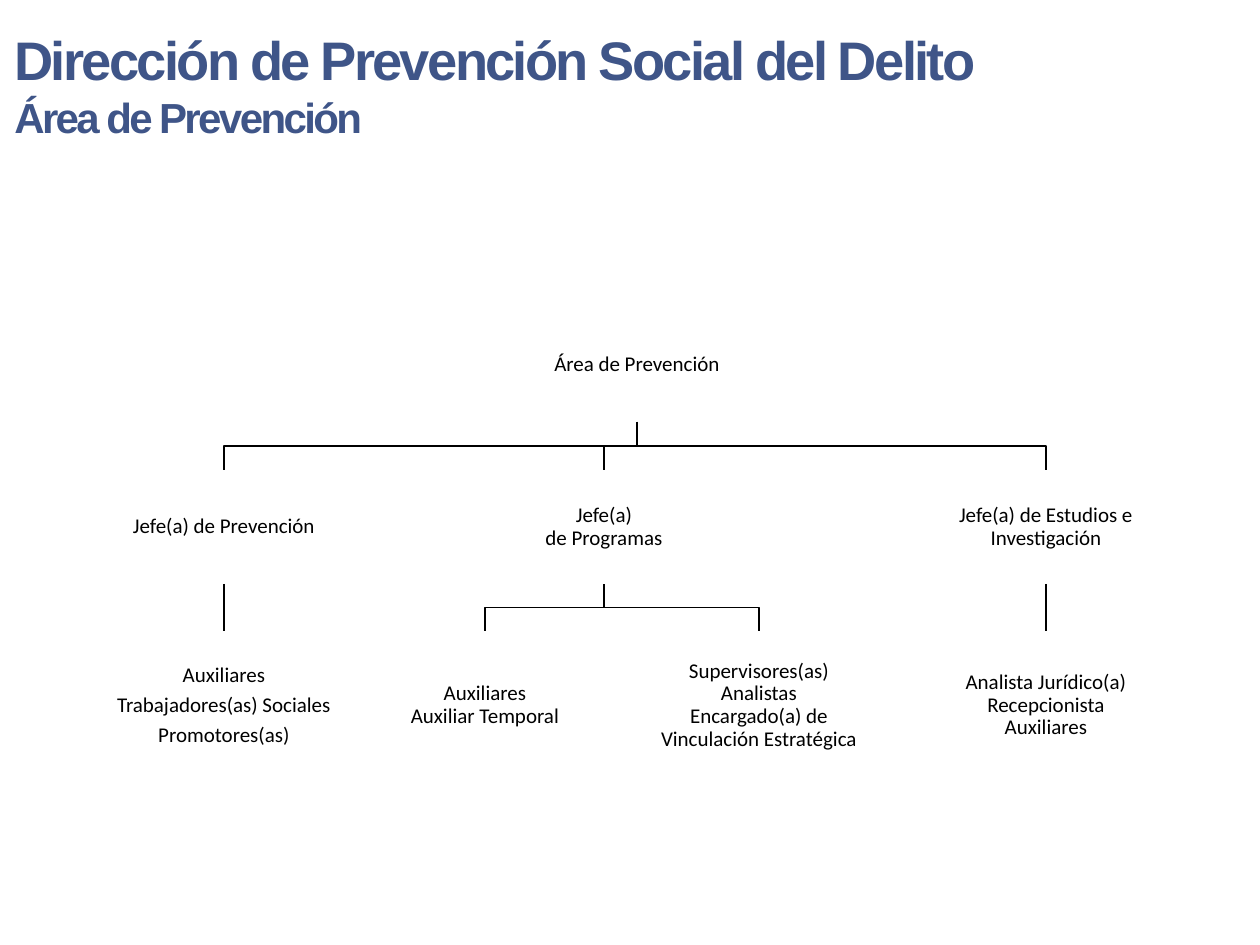
from pptx import Presentation
from pptx import util as u
from pptx.dml.color import RGBColor
from pptx.enum import shapes, text
from pptx.oxml import ns
from lxml import etree

THEME = {
    "title": {"name": "Arial", "size": u.Pt(31), "bold": True},
    "sub": {"name": "Arial", "size": u.Pt(24), "bold": True},
    "node": {"name": "Calibri", "size": u.Pt(12)},
    "head": RGBColor(0x3F, 0x55, 0x88),
    "ink": RGBColor(0, 0, 0),
    "paper": RGBColor(255, 255, 255),
    "line": u.Pt(1),
    "gap": u.Pt(4.2),
}

# Each chief: left edge, lines, loose spacing, staff as (left edge, lines)
CHIEFS = [
    (0, ["Jefe(a) de Prevención"], True,
     [(0, ["Auxiliares", "Trabajadores(as) Sociales", "Promotores(as)"])]),
    (380, ["Jefe(a)", "de Programas"], False,
     [(261, ["Auxiliares", "Auxiliar Temporal"]),
      (535, ["Supervisores(as)", "Analistas", "Encargado(a) de",
             "Vinculación Estratégica"])]),
    (822, ["Jefe(a) de Estudios e", "Investigación"], False,
     [(822, ["Analista Jurídico(a)", "Recepcionista", "Auxiliares"])]),
]


def px(n):
    return u.Emu(round(n * 914400 / 126))


def style(par, font, color):
    for key, val in font.items():
        setattr(par.font, key, val)
    par.font.color.rgb = color


def ink(line):
    line.color.rgb = THEME["ink"]
    line.width = THEME["line"]


def title(slide, x, y, w, h):
    box = slide.shapes.add_textbox(*map(px, (x, y, w, h)))
    frame = box.text_frame
    frame.word_wrap = True
    frame.auto_size = text.MSO_AUTO_SIZE.SHAPE_TO_FIT_TEXT
    frame.text = "Dirección de Prevención Social del Delito\nÁrea de Prevención"
    for par, key in zip(frame.paragraphs, ("title", "sub")):
        style(par, THEME[key], THEME["head"])
        # Tight letter spacing
        par.runs[0].font._element.set("spc", "-150")


def node(slide, x, y, w, h, lines, loose=False):
    box = slide.shapes.add_shape(shapes.MSO_SHAPE.RECTANGLE,
                                 *map(px, (x, y, w, h)))
    box.shadow.inherit = False
    box.fill.solid()
    box.fill.fore_color.rgb = THEME["paper"]
    box.line.fill.background()
    frame = box.text_frame
    frame.text = "\n".join(lines)
    frame.word_wrap = True
    frame.vertical_anchor = text.MSO_ANCHOR.MIDDLE
    for side in ("left", "top", "right", "bottom"):
        setattr(frame, f"margin_{side}", px(1))
    for par in frame.paragraphs:
        par.alignment = text.PP_ALIGN.CENTER
        par.line_spacing = 0.9
        if loose:
            par.space_after = THEME["gap"]
        style(par, THEME["node"], THEME["ink"])
    return box


def link(slide, top, low):
    x1, y1 = top.left + top.width // 2, top.top + top.height
    x2, y2 = low.left + low.width // 2, low.top
    if x1 == x2:
        wire = slide.shapes.add_connector(shapes.MSO_CONNECTOR.STRAIGHT,
                                          x1, y1, x2, y2)
        wire.begin_connect(top, 2)
        wire.end_connect(low, 0)
        etree.SubElement(wire._element.spPr, ns.qn("a:effectLst"))
    else:
        mid = (y1 + y2) // 2
        path = slide.shapes.build_freeform(x1, y1)
        path.add_line_segments([(x1, mid), (x2, mid), (x2, y2)], close=False)
        wire = path.convert_to_shape()
        wire.shadow.inherit = False
        wire.fill.background()
    ink(wire.line)


def chart(slide, x, y):
    wide = 228
    # Head of the area
    root = node(slide, x + 340, y, 374, 115, ["Área de Prevención"])
    # Chiefs and their staff
    for left, lines, loose, staff in CHIEFS:
        chief = node(slide, x + left, y + 163, wide, 114, lines, loose)
        link(slide, root, chief)
        for edge, names in staff:
            team = node(slide, x + edge, y + 324, wide, 149, names, loose)
            link(slide, chief, team)


def main():
    deck = Presentation()
    deck.slide_width, deck.slide_height = px(1260), px(945)
    slide = deck.slides.add_slide(deck.slide_layouts[6])
    title(slide, 2, 20, 1006, 130)
    chart(slide, 110, 307)
    deck.save("out.pptx")


if __name__ == "__main__":
    main()
